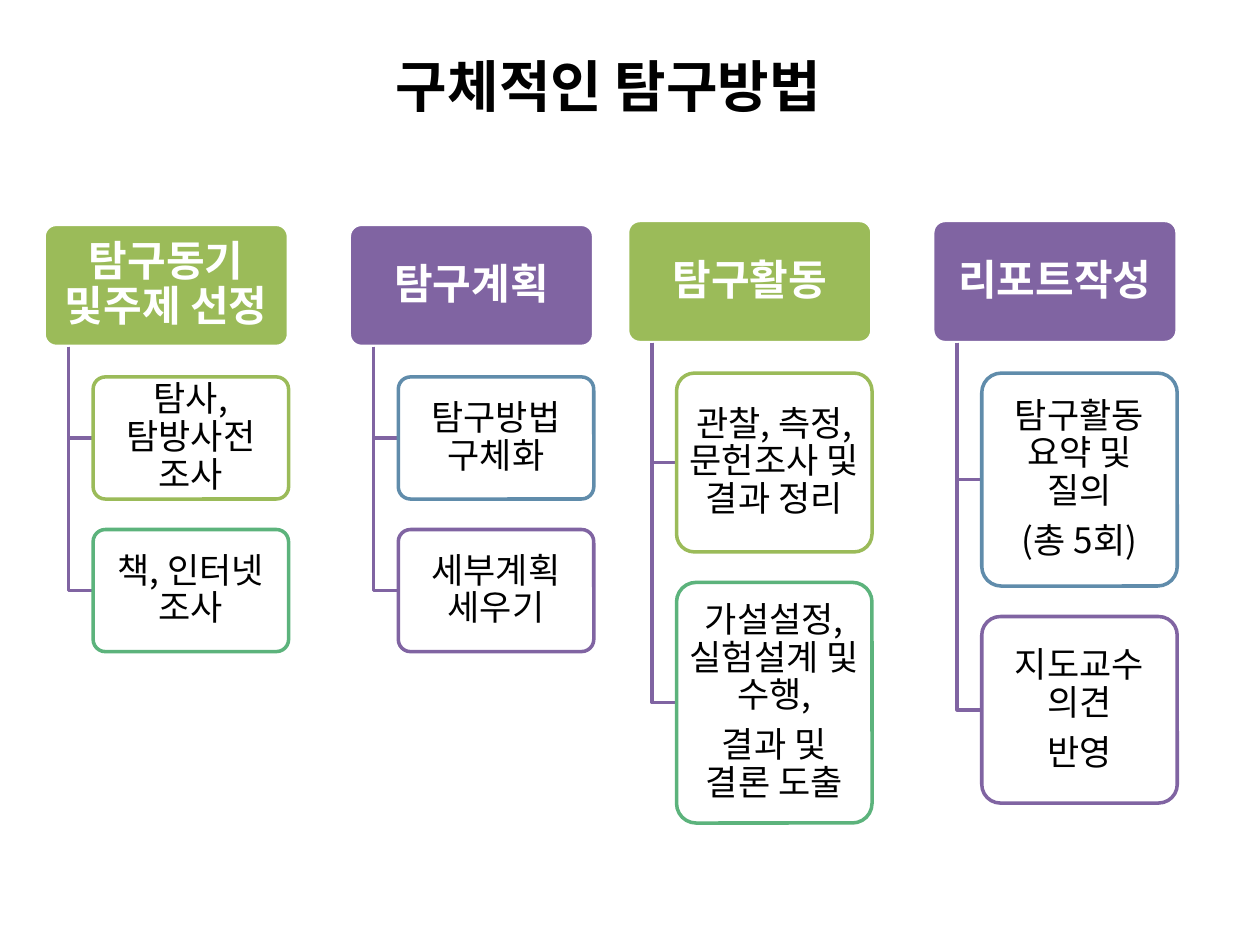
"""Build a slide showing four research stages with their tasks hanging below."""
from lxml import etree
from pptx import Presentation
from pptx.dml.color import RGBColor
from pptx.enum.shapes import MSO_SHAPE
from pptx.enum.text import MSO_ANCHOR, PP_ALIGN
from pptx.oxml.ns import qn
from pptx.util import Pt

ROUNDED = MSO_SHAPE.ROUNDED_RECTANGLE
CENTER = PP_ALIGN.CENTER
MIDDLE = MSO_ANCHOR.MIDDLE

FONT = "Noto Sans CJK KR"
BLACK, WHITE = "000000", "FFFFFF"
LIME, PURPLE, GREEN, BLUE = "9BBB59", "8064A2", "5CB37C", "608CAB"

TITLE = "구체적인 탐구방법"
GROUPS = [
    (25.2, 128.2, [
        ("탐구동기 및주제 선정", LIME, [
            (["탐사, 탐방사전 조사"], LIME, 69.8),
            (["책, 인터넷 조사"], GREEN, 69.8),
        ]),
        ("탐구계획", PURPLE, [
            (["탐구방법 구체화"], BLUE, 69.8),
            (["세부계획 세우기"], PURPLE, 69.8),
        ]),
    ]),
    (358.6, 126, [
        ("탐구활동", LIME, [
            (["관찰, 측정, 문헌조사 및 결과 정리"], LIME, 102.2),
            (["가설설정, 실험설계 및 수행,", "결과 및 결론 도출"], GREEN, 137.5),
        ]),
        ("리포트작성", PURPLE, [
            (["탐구활동 요약 및 질의", "(총 5회)"], BLUE, 121.7),
            (["지도교수 의견", "반영"], PURPLE, 106.6),
        ]),
    ]),
]

HEADER_WIDTH, HEADER_HEIGHT = 139.7, 69.8
COLUMN_PITCH = 174.4
GAP = 17.4
TRUNK_INDENT, TASK_INDENT = 14, 28
TASK_WIDTH = HEADER_WIDTH - TASK_INDENT
LINE_WIDTH = 2


def color(value):
    return RGBColor.from_string(value)


def write(frame, texts, size, text_color, bold=False):
    frame.word_wrap = True
    for index, text in enumerate(texts):
        paragraph = frame.add_paragraph() if index else frame.paragraphs[0]
        paragraph.text = text
        paragraph.alignment = CENTER
        font = paragraph.font
        font.name, font.size, font.bold = FONT, Pt(size), bold
        font.color.rgb = color(text_color)
        properties = paragraph._p.pPr.find(qn("a:defRPr"))
        etree.SubElement(properties, qn("a:ea"), typeface=FONT)


def add_box(slide, bounds, texts, size, fill, line, text_color, inset, bold=False):
    shape = slide.shapes.add_shape(ROUNDED, *map(Pt, bounds))
    shape.adjustments[0] = 0.1
    shape.shadow.inherit = False
    shape.fill.solid()
    shape.fill.fore_color.rgb = color(fill)
    shape.line.color.rgb = color(line)
    shape.line.width = Pt(LINE_WIDTH)
    frame = shape.text_frame
    frame.vertical_anchor = MIDDLE
    frame.margin_left = frame.margin_right = Pt(inset)
    frame.margin_top = frame.margin_bottom = Pt(2)
    write(frame, texts, size, text_color, bold)
    for paragraph in frame.paragraphs:
        paragraph.line_spacing = 0.9
        paragraph.space_after = Pt(size * 0.35)
    return shape


def add_elbow(slide, left, top, right, bottom):
    builder = slide.shapes.build_freeform(Pt(left), Pt(top))
    corners = [(Pt(left), Pt(bottom)), (Pt(right), Pt(bottom))]
    builder.add_line_segments(corners, close=False)
    elbow = builder.convert_to_shape()
    elbow.shadow.inherit = False
    elbow.fill.background()
    elbow.line.color.rgb = color(PURPLE)
    elbow.line.width = Pt(LINE_WIDTH)


def add_column(slide, left, top, heading, fill, tasks):
    add_box(slide, (left, top, HEADER_WIDTH, HEADER_HEIGHT), [heading],
            24, fill, WHITE, WHITE, 3.6, True)
    header_bottom = top + HEADER_HEIGHT
    task_left = left + TASK_INDENT
    task_top = header_bottom + GAP
    for texts, line, height in tasks:
        add_elbow(slide, left + TRUNK_INDENT, header_bottom,
                  task_left, task_top + height / 2)
        box = add_box(slide, (task_left, task_top, TASK_WIDTH, height), texts,
                      20, WHITE, line, BLACK, 2.9)
        fill_color = box._element.spPr.find(qn("a:solidFill"))[0]
        etree.SubElement(fill_color, qn("a:alpha"), val="90000")
        task_top += height + GAP


def main():
    presentation = Presentation()
    presentation.slide_width, presentation.slide_height = Pt(720), Pt(540)
    slide = presentation.slides.add_slide(presentation.slide_layouts[6])
    for group_left, top, columns in GROUPS:
        for index, column in enumerate(columns):
            add_column(slide, group_left + index * COLUMN_PITCH, top, *column)
    title = slide.shapes.add_textbox(Pt(33.8), Pt(25.9), Pt(648), Pt(90))
    title.text_frame.margin_right = Pt(27)
    write(title.text_frame, [TITLE], 32, BLACK, True)
    presentation.save("out.pptx")


if __name__ == "__main__":
    main()
